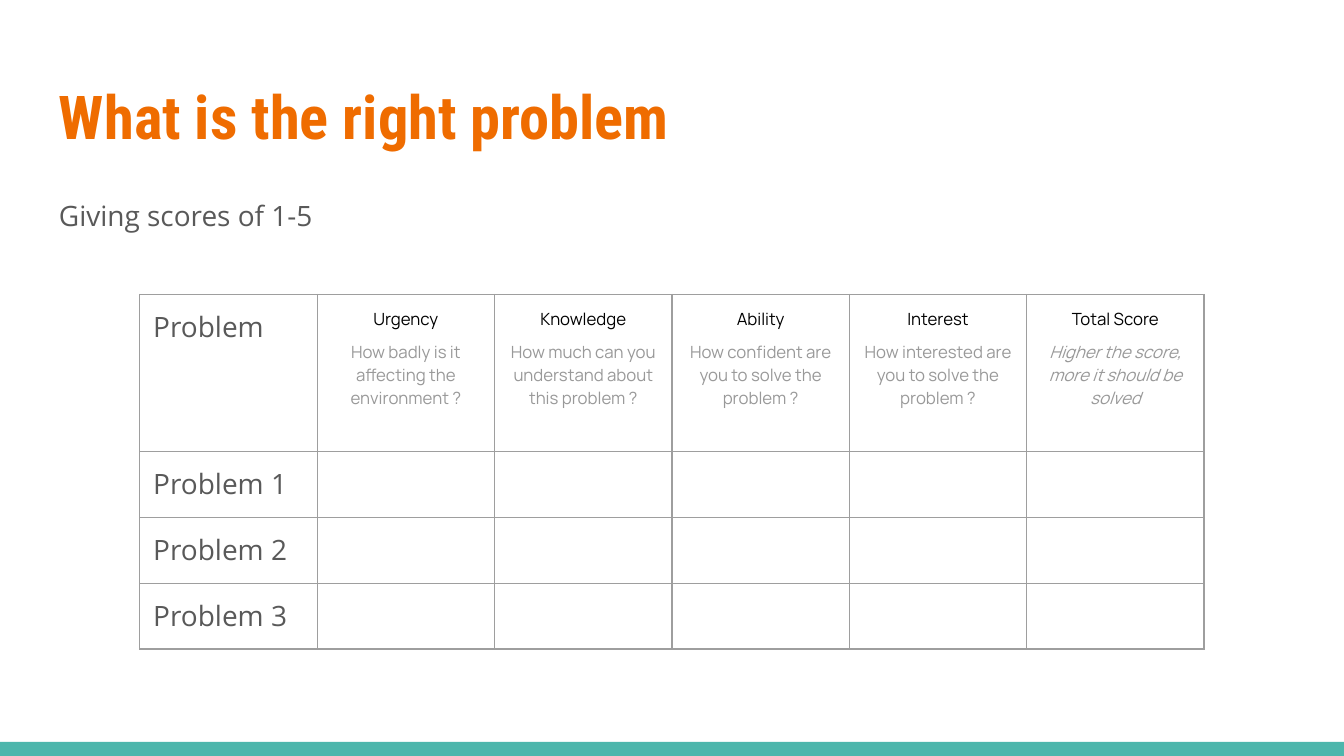
from lxml import etree
from pptx import Presentation
from pptx.dml.color import RGBColor
from pptx.enum.shapes import MSO_SHAPE
from pptx.enum.text import MSO_ANCHOR, PP_ALIGN
from pptx.oxml.ns import qn
from pptx.util import Inches, Pt

COLORS = {
    "title": "EF6C00",
    "body": "595959",
    "heading": "000000",
    "hint": "999999",
    "border": "9E9E9E",
    "bar": "4DB6AC",
}
TITLE_FONT, BODY_FONT, HEADER_FONT = "Roboto Condensed", "Open Sans", "Manrope"

CRITERIA = [
    ("Urgency", "How badly is it affecting the environment ?"),
    ("Knowledge", "How much can you understand about this problem ?"),
    ("Ability", "How confident are you to solve the problem ?"),
    ("Interest", "How interested are you to solve the problem ?"),
    ("Total Score", "Higher the score, more it should be solved"),
]
ROW_LABELS = ["Problem", "Problem 1", "Problem 2", "Problem 3"]
COLUMN_WIDTH = 1.32
HEADER_HEIGHT, ROW_HEIGHT = 1.17, 0.49


def add_run(paragraph, text, size, font, color, bold=False, italic=False):
    run = paragraph.add_run()
    run.text = text
    run.font.size = Pt(size)
    run.font.name = font
    run.font.bold = bold
    run.font.italic = italic
    run.font.color.rgb = RGBColor.from_string(COLORS[color])


def set_margins(box):
    """Give a text frame or a table cell equal insets."""
    box.margin_left = box.margin_right = Inches(0.1)
    box.margin_top = box.margin_bottom = Inches(0.1)


def add_text(slide, top, height, *run_style, **emphasis):
    box = slide.shapes.add_textbox(Inches(0.34), Inches(top), Inches(9.32), Inches(height))
    frame = box.text_frame
    frame.word_wrap = True
    frame.vertical_anchor = MSO_ANCHOR.TOP
    set_margins(frame)
    add_run(frame.paragraphs[0], *run_style, **emphasis)


def add_bar(slide):
    bar = slide.shapes.add_shape(
        MSO_SHAPE.RECTANGLE, 0, Inches(5.52), Inches(10), Inches(0.11))
    bar.shadow.inherit = False
    bar.fill.solid()
    bar.fill.fore_color.rgb = RGBColor.from_string(COLORS["bar"])
    bar.line.fill.background()


def style_cell(cell):
    """Outline the cell on all four sides and leave it unfilled."""
    properties = cell._tc.get_or_add_tcPr()
    for side in ("a:lnL", "a:lnR", "a:lnT", "a:lnB"):
        line = etree.SubElement(properties, qn(side), w=str(Pt(0.75)))
        fill = etree.SubElement(line, qn("a:solidFill"))
        etree.SubElement(fill, qn("a:srgbClr"), val=COLORS["border"])
    cell.fill.background()


def fill_criterion(cell, name, hint, italic):
    set_margins(cell)
    heading = cell.text_frame.paragraphs[0]
    add_run(heading, name, 9, HEADER_FONT, "heading")
    question = cell.text_frame.add_paragraph()
    question.space_before = Pt(5)
    add_run(question, hint, 9, HEADER_FONT, "hint", italic=italic)
    for paragraph in (heading, question):
        paragraph.alignment = PP_ALIGN.CENTER


def add_score_table(slide):
    rows, columns = len(ROW_LABELS), len(CRITERIA) + 1
    heights = [HEADER_HEIGHT] + [ROW_HEIGHT] * (rows - 1)
    table = slide.shapes.add_table(
        rows, columns, Inches(1.04), Inches(2.19),
        Inches(COLUMN_WIDTH * columns), Inches(sum(heights))).table
    table.first_row = table.horz_banding = False
    for column in table.columns:
        column.width = Inches(COLUMN_WIDTH)
    for row, height in zip(table.rows, heights):
        row.height = Inches(height)
    for cell in table.iter_cells():
        style_cell(cell)

    # Row labels, then the criteria of the header row
    for index, label in enumerate(ROW_LABELS):
        cell = table.cell(index, 0)
        set_margins(cell)
        add_run(cell.text_frame.paragraphs[0], label, 15, BODY_FONT, "body")
    for index, (name, hint) in enumerate(CRITERIA, start=1):
        fill_criterion(table.cell(0, index), name, hint, italic=name == "Total Score")


def main():
    presentation = Presentation()
    # Widescreen, 16:9
    presentation.slide_width = Inches(10)
    presentation.slide_height = Inches(10) * 9 // 16
    slide = presentation.slides.add_slide(presentation.slide_layouts[6])

    # Bottom bar
    add_bar(slide)
    # Title and introduction
    add_text(slide, 0.49, 0.77,
             "What is the right problem", 32.4, TITLE_FONT, "title", bold=True)
    add_text(slide, 1.38, 3.61,
             "Giving scores of 1-5", 15, BODY_FONT, "body")
    # Scoring grid
    add_score_table(slide)

    presentation.save("out.pptx")


if __name__ == "__main__":
    main()
